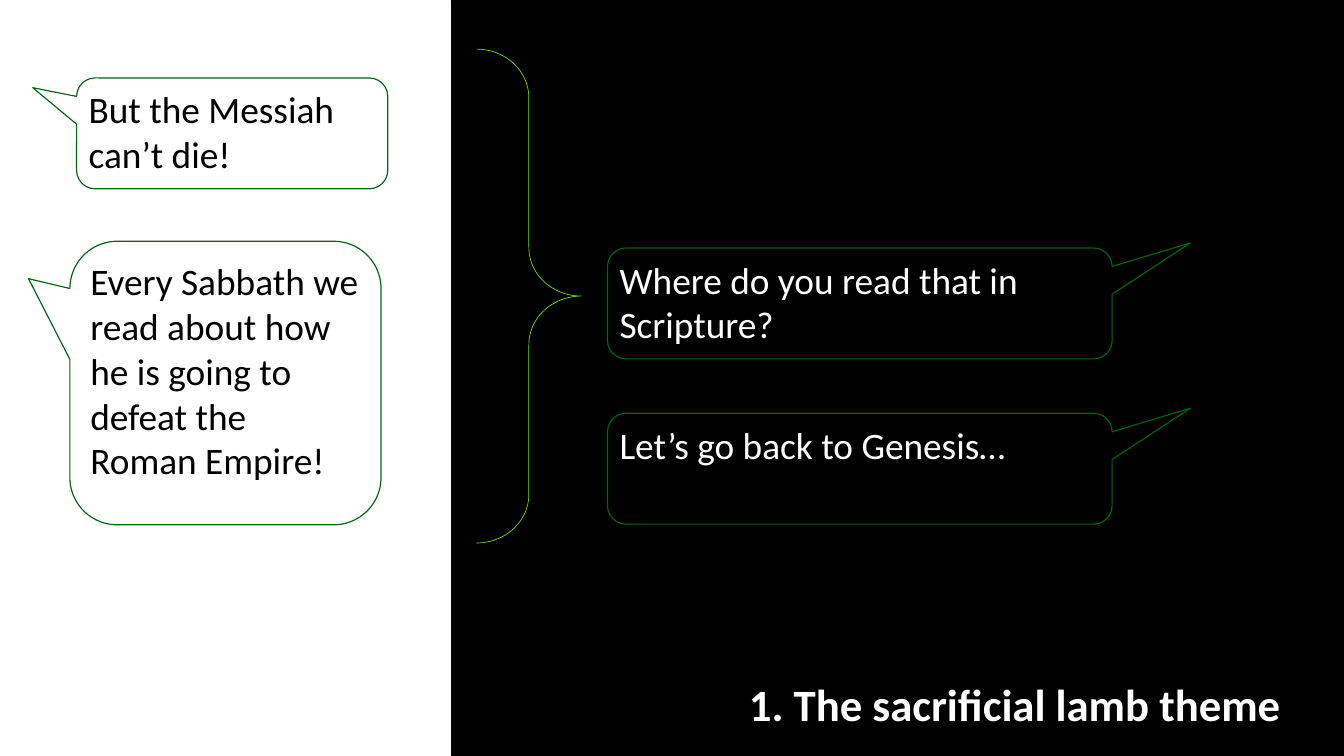
"""Build the slide on the sacrificial lamb theme as a dialogue of speech bubbles."""
from pptx import Presentation
from pptx.dml.color import RGBColor
from pptx.enum.shapes import MSO_SHAPE as Shape
from pptx.enum.text import MSO_ANCHOR as Anchor, MSO_AUTO_SIZE as AutoSize, PP_ALIGN as Align
from pptx.util import Pt

THEME = {
    "font": "Calibri", "speech_size": 40, "title_size": 48,
    "dark": "000000", "light": "FFFFFF", "bubble_line": "056214", "brace_line": "72DB2B",
}
SLIDE = (1440, 810)
PANEL_WIDTH = 482.4
TITLE = "1. The sacrificial lamb theme"
TITLE_BOX = (PANEL_WIDTH, 721.4, 897.1, 65.5)
BRACE_BOX = (510.5, 52.6, 112.3, 529.2)
BRACE_SHAPE = (0.464, 0.5)
ROUNDING = 0.167

LEFT_WIDTH, RIGHT_LEFT, RIGHT_WIDTH, SHORT = 333.4, 650.9, 540.7, 118.8
RIGHT_TAIL = (0.655, -0.546)
BUBBLES = [
    ("But the Messiah can’t die!",
     (82.1, 83.5, LEFT_WIDTH, SHORT), (-0.641, -0.412), "light", "dark"),
    ("Where do you read that in Scripture?",
     (RIGHT_LEFT, 265.7, RIGHT_WIDTH, SHORT), RIGHT_TAIL, "dark", "light"),
    ("Every Sabbath we read about how he is going to defeat the Roman Empire!",
     (74.9, 258.5, LEFT_WIDTH, 303.8), (-0.633, -0.368), "light", "dark"),
    ("Let’s go back to Genesis…",
     (RIGHT_LEFT, 442.8, RIGHT_WIDTH, SHORT), RIGHT_TAIL, "dark", "light"),
]


def color(name):
    return RGBColor.from_string(THEME[name])


def add_shape(page, kind, box, line, width, fill=None, adjustments=()):
    shape = page.shapes.add_shape(kind, *map(Pt, box))
    shape.shadow.inherit = False
    if fill:
        shape.fill.solid()
        shape.fill.fore_color.rgb = color(fill)
    else:
        shape.fill.background()
    shape.line.color.rgb = color(line)
    shape.line.width = Pt(width)
    for index, value in enumerate(adjustments):
        shape.adjustments[index] = value
    return shape


def write(shape, text, size, ink, align, bold=False):
    frame = shape.text_frame
    frame.word_wrap = True
    frame.vertical_anchor = Anchor.TOP
    para = frame.paragraphs[0]
    para.alignment = align
    span = para.add_run()
    span.text = text
    span.font.name = THEME["font"]
    span.font.size = Pt(THEME[size])
    span.font.bold = bold
    span.font.color.rgb = color(ink)


def main():
    deck = Presentation()
    deck.slide_width, deck.slide_height = map(Pt, SLIDE)
    page = deck.slides.add_slide(deck.slide_layouts[6])
    page.background.fill.solid()
    page.background.fill.fore_color.rgb = color("dark")

    add_shape(page, Shape.RECTANGLE, (0, 0, PANEL_WIDTH, SLIDE[1]), "light", 0.75, "light")
    for text, box, tail, fill, ink in BUBBLES:
        bubble = add_shape(page, Shape.ROUNDED_RECTANGULAR_CALLOUT, box, "bubble_line", 1.25,
                           fill, (*tail, ROUNDING))
        write(bubble, text, "speech_size", ink, Align.LEFT)
    add_shape(page, Shape.RIGHT_BRACE, BRACE_BOX, "brace_line", 0.75, adjustments=BRACE_SHAPE)

    title = page.shapes.add_textbox(*map(Pt, TITLE_BOX))
    write(title, TITLE, "title_size", "light", Align.RIGHT, bold=True)
    title.text_frame.auto_size = AutoSize.SHAPE_TO_FIT_TEXT
    deck.save("out.pptx")


if __name__ == "__main__":
    main()
